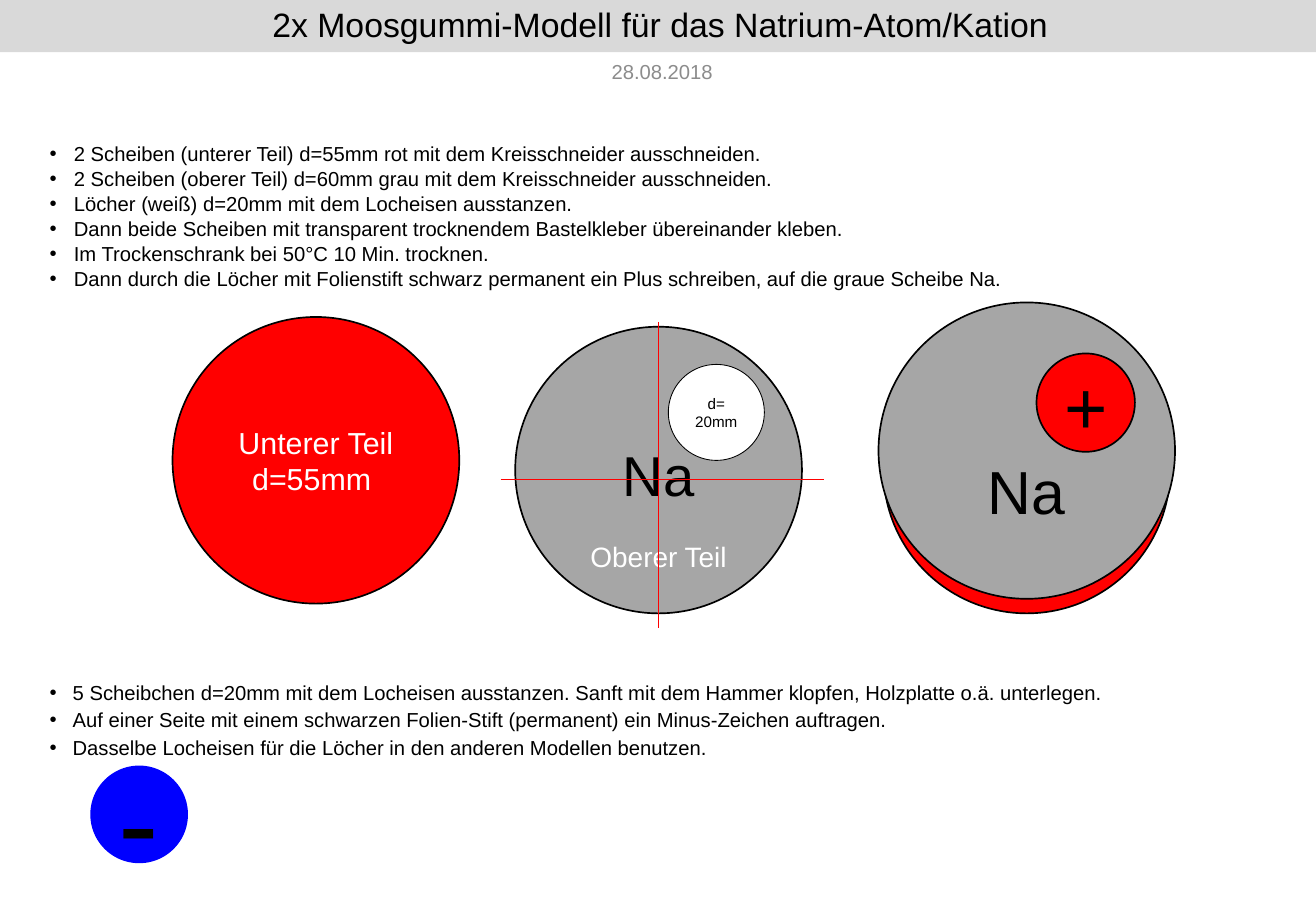
from dataclasses import dataclass

from lxml import etree
from pptx import Presentation
from pptx import util as u
from pptx.dml.color import RGBColor
from pptx.enum import shapes, text
from pptx.oxml import ns

PX = 9144
FONT = "Arial"
COLOURS = {
    "black": "000000",
    "white": "FFFFFF",
    "band": "D9D9D9",
    "date": "8C8C8C",
    "grey": "A6A6A6",
    "red": "FF0000",
    "blue": "0000FF",
}
STEPS = [
    "2 Scheiben (unterer Teil) d=55mm rot mit dem Kreisschneider ausschneiden.",
    "2 Scheiben (oberer Teil) d=60mm grau mit dem Kreisschneider ausschneiden.",
    "Löcher (weiß) d=20mm mit dem Locheisen ausstanzen.",
    "Dann beide Scheiben mit transparent trocknendem Bastelkleber übereinander kleben.",
    "Im Trockenschrank bei 50°C 10 Min. trocknen.",
    "Dann durch die Löcher mit Folienstift schwarz permanent ein Plus schreiben, "
    "auf die graue Scheibe Na.",
]
ELECTRON_STEPS = [
    "5 Scheibchen d=20mm mit dem Locheisen ausstanzen. "
    "Sanft mit dem Hammer klopfen, Holzplatte o.ä. unterlegen.",
    "Auf einer Seite mit einem schwarzen Folien-Stift (permanent) ein Minus-Zeichen auftragen.",
    "Dasselbe Locheisen für die Löcher in den anderen Modellen benutzen.",
]


@dataclass(frozen=True)
class Label:
    content: str
    size: float
    colour: str = "black"
    before: float = 0


@dataclass(frozen=True)
class Disk:
    left: int
    top: int
    diameter: int
    fill: str
    line: str = "black"
    line_width: float = 1
    labels: tuple[Label, ...] = ()
    inset_top: int = 0


@dataclass(frozen=True)
class Line:
    start: tuple[int, int]
    end: tuple[int, int]


@dataclass(frozen=True)
class BulletList:
    top: int
    height: int
    items: list[str]
    indent: int
    line_spacing: float


DISKS = [
    Disk(424, 269, 236, "grey", inset_top=60,
         labels=(Label("Na", 33.3), Label("Oberer Teil", 16.6, "white", 19))),
    Disk(550, 300, 79, "white", line_width=0.5,
         labels=(Label("d=", 9), Label("20mm", 9))),
    Disk(142, 261, 236, "red",
         labels=(Label("Unterer Teil", 18, "white"), Label("d=55mm ", 18, "white"))),
    Disk(727, 269, 236, "red"),
    Disk(723, 249, 244, "grey", labels=(Label("Na", 36),), inset_top=65),
    Disk(853, 291, 81, "red", labels=(Label("+", 44),), inset_top=4),
    Disk(75, 631, 79, "blue", "blue", labels=(Label("-", 72),), inset_top=6),
]
CENTRE_LINES = [Line((542, 265), (542, 517)), Line((412, 395), (678, 395))]
BULLET_LISTS = [
    BulletList(110, 142, STEPS, 20, 1.0),
    BulletList(552, 79, ELECTRON_STEPS, 19, 1.1),
]


def px(value: int) -> u.Emu:
    return u.Emu(value * PX)


def colour(name: str) -> RGBColor:
    return RGBColor.from_string(COLOURS[name])


def prepare_frame(frame, *, anchor=text.MSO_ANCHOR.MIDDLE, wrap=False,
                  left=0, top=0) -> None:
    frame.word_wrap = wrap
    frame.vertical_anchor = anchor
    frame.margin_left = frame.margin_right = px(left)
    frame.margin_top, frame.margin_bottom = px(top), 0


def write_text(frame, content: str, *, size: float, ink: str = "black",
               align=text.PP_ALIGN.CENTER, before: float = 0, after: float = 0,
               line_spacing: float = 1.0, indent: int = 0):
    paragraph = frame.paragraphs[0]
    if paragraph.runs:
        paragraph = frame.add_paragraph()
    paragraph.alignment = align
    paragraph.line_spacing = line_spacing
    paragraph.space_before = u.Pt(before)
    paragraph.space_after = u.Pt(after)
    run = paragraph.add_run()
    run.text = content
    run.font.name = FONT
    run.font.size = u.Pt(size)
    run.font.color.rgb = colour(ink)
    if indent:
        properties = paragraph._p.get_or_add_pPr()
        properties.set("marL", str(px(indent)))
        properties.set("indent", str(-px(indent)))
        etree.SubElement(properties, ns.qn("a:buFont")).set("typeface", FONT)
        etree.SubElement(properties, ns.qn("a:buChar")).set("char", "•")


def draw_header(slide) -> None:
    band = slide.shapes.add_shape(
        shapes.MSO_SHAPE.RECTANGLE, 0, 0, px(1087), px(43))
    band.shadow.inherit = False
    band.fill.solid()
    band.fill.fore_color.rgb = colour("band")
    band.line.fill.background()
    prepare_frame(band.text_frame, wrap=True)
    write_text(band.text_frame, "2x Moosgummi-Modell für das Natrium-Atom/Kation",
               size=20, line_spacing=0.9)
    date = slide.shapes.add_textbox(px(480), px(43), px(130), px(31))
    prepare_frame(date.text_frame, wrap=True)
    write_text(date.text_frame, "28.08.2018", size=12, ink="date")


def draw_disk(slide, disk: Disk) -> None:
    shape = slide.shapes.add_shape(
        shapes.MSO_SHAPE.OVAL, px(disk.left), px(disk.top),
        px(disk.diameter), px(disk.diameter))
    shape.shadow.inherit = False
    shape.fill.solid()
    shape.fill.fore_color.rgb = colour(disk.fill)
    shape.line.color.rgb = colour(disk.line)
    shape.line.width = u.Pt(disk.line_width)
    prepare_frame(shape.text_frame, top=disk.inset_top)
    for label in disk.labels:
        write_text(shape.text_frame, label.content, size=label.size,
                   ink=label.colour, before=label.before)


def draw_line(slide, line: Line) -> None:
    connector = slide.shapes.add_connector(
        shapes.MSO_CONNECTOR.STRAIGHT, *map(px, line.start + line.end))
    connector.line.color.rgb = colour("red")
    connector.line.width = u.Pt(0.5)
    etree.SubElement(connector._element.spPr, ns.qn("a:effectLst"))


def draw_bullets(slide, bullets: BulletList) -> None:
    box = slide.shapes.add_textbox(
        px(31), px(bullets.top), px(1024), px(bullets.height))
    prepare_frame(box.text_frame, anchor=text.MSO_ANCHOR.TOP, wrap=True, left=10, top=6)
    for item in bullets.items:
        write_text(box.text_frame, item, size=12, align=text.PP_ALIGN.LEFT, after=0.5,
                   line_spacing=bullets.line_spacing, indent=bullets.indent)


def main() -> None:
    presentation = Presentation()
    presentation.slide_width = px(1083)
    presentation.slide_height = px(750)
    slide = presentation.slides.add_slide(presentation.slide_layouts[6])
    draw_header(slide)
    for disk in DISKS:
        draw_disk(slide, disk)
    for line in CENTRE_LINES:
        draw_line(slide, line)
    for bullets in BULLET_LISTS:
        draw_bullets(slide, bullets)
    presentation.save("out.pptx")


if __name__ == "__main__":
    main()
